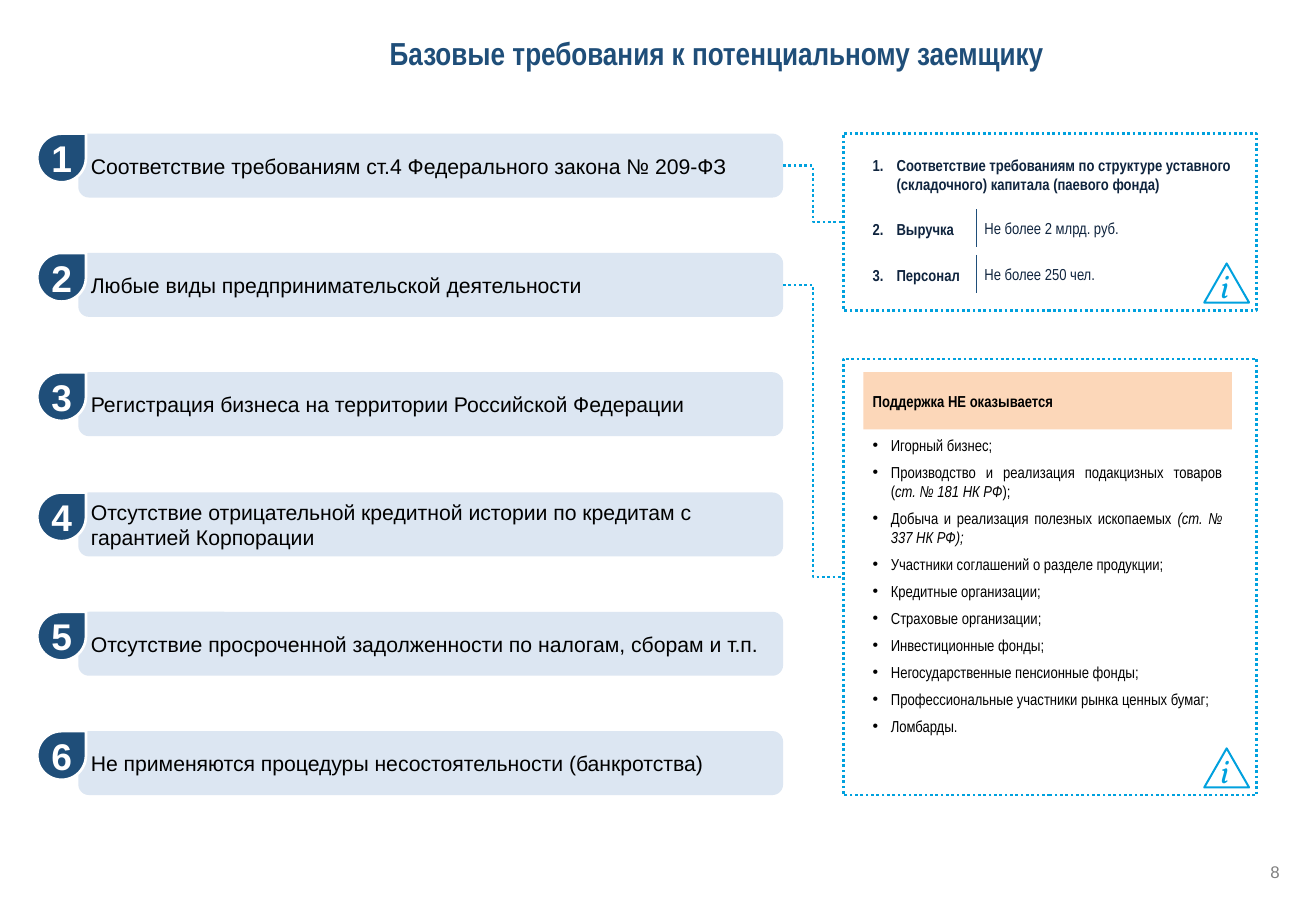
from lxml.etree import SubElement
from pptx import Presentation
from pptx.dml.color import RGBColor
from pptx.enum.dml import MSO_LINE
from pptx.enum.shapes import MSO_CONNECTOR as CONNECTOR, MSO_SHAPE as SHAPE
from pptx.enum.text import MSO_ANCHOR as ANCHOR, MSO_AUTO_SIZE as AUTO_SIZE, PP_ALIGN as ALIGN
from pptx.oxml.ns import qn
from pptx.util import Pt

PX = 9144
NAVY, CYAN, PALE, PEACH = "1F4E79", "00A1DE", "DCE6F2", "FCD7B9"
WHITE, BLACK, INK, GRAY = "FFFFFF", "000000", "0F243E", "808080"

TITLE = {"name": "Arial Narrow", "size": Pt(24), "bold": True, "color": NAVY}
REQUIREMENT = {"name": "Arial", "size": Pt(16), "color": BLACK}
BADGE = {"name": "Arial", "size": Pt(28), "bold": True, "color": WHITE}
NOTE = {"name": "Arial Narrow", "size": Pt(12), "color": INK}
NOTE_BOLD = {**NOTE, "bold": True}
HEADER = {**NOTE_BOLD, "color": BLACK}
BULLET = {**NOTE, "color": BLACK}
INFO = {"name": "Vollkorn", "size": Pt(24), "italic": True, "color": CYAN}
PAGE = {"name": "Arial", "size": Pt(12.7), "color": GRAY}

REQUIREMENTS = [
    "Соответствие требованиям ст.4 Федерального закона № 209-ФЗ",
    "Любые виды предпринимательской деятельности",
    "Регистрация бизнеса на территории Российской Федерации",
    "Отсутствие отрицательной кредитной истории по кредитам с гарантией Корпорации",
    "Отсутствие просроченной задолженности по налогам, сборам и т.п.",
    "Не применяются процедуры несостоятельности (банкротства)",
]
LIMITS = [("Выручка", "Не более 2 млрд. руб."), ("Персонал", "Не более 250 чел.")]
EXCLUSIONS = [
    ["Игорный бизнес;"],
    ["Производство и реализация подакцизных товаров (", "ст. № 181 НК РФ", ");"],
    ["Добыча и реализация полезных ископаемых ", "(ст. № 337 НК РФ);"],
    ["Участники соглашений о разделе продукции;"],
    ["Кредитные организации;"],
    ["Страховые организации;"],
    ["Инвестиционные фонды;"],
    ["Негосударственные пенсионные фонды;"],
    ["Профессиональные участники рынка ценных бумаг;"],
    ["Ломбарды."],
]


def rgb(value):
    return RGBColor.from_string(value)


def scaled(*lengths):
    return [length * PX for length in lengths]


def add_run(paragraph, text, style):
    run = paragraph.add_run()
    run.text = text
    for name, value in style.items():
        if name == "color":
            run.font.color.rgb = rgb(value)
        else:
            setattr(run.font, name, value)


def add_bullet(paragraph, indent, tag, **attributes):
    properties = paragraph._p.get_or_add_pPr()
    properties.set("marL", str(indent * PX))
    properties.set("indent", str(-indent * PX))
    SubElement(properties, qn("a:buFont"), typeface="+mj-lt" if tag == "a:buAutoNum" else "Arial")
    SubElement(properties, qn(tag), **attributes)


def write(shape, text, style, align=ALIGN.LEFT, anchor=ANCHOR.MIDDLE, inset=None, wrap=True):
    frame = shape.text_frame
    settings = {"word_wrap": wrap, "vertical_anchor": anchor, "auto_size": AUTO_SIZE.NONE}
    if inset is not None:
        settings.update({f"margin_{side}": inset for side in ("left", "top", "right", "bottom")})
    for name, value in settings.items():
        setattr(frame, name, value)
    paragraph = frame.paragraphs[0]
    paragraph.alignment = align
    if text:
        add_run(paragraph, text, style)
    return paragraph


def add_text(slide, box, text, style, **options):
    return write(slide.shapes.add_textbox(*scaled(*box)), text, style, **options)


def format_line(line, color, width, dash=None):
    line.color.rgb = rgb(color)
    line.width = Pt(width)
    if dash:
        line.dash_style = dash


def add_shape(slide, kind, box, fill=None, line=None):
    shape = slide.shapes.add_shape(kind, *scaled(*box))
    shape.shadow.inherit = False
    if fill:
        shape.fill.solid()
        shape.fill.fore_color.rgb = rgb(fill)
    else:
        shape.fill.background()
    if line:
        format_line(shape.line, *line)
    else:
        shape.line.fill.background()
    return shape


def add_line(slide, kind, ends, *line):
    connector = slide.shapes.add_connector(kind, *scaled(*ends))
    format_line(connector.line, *line)
    SubElement(connector._element.spPr, qn("a:effectLst"))
    return connector


def add_title(slide, box):
    title = slide.shapes.title
    for name, value in zip(("left", "top", "width", "height"), scaled(*box)):
        setattr(title, name, value)
    write(title, "Базовые требования к потенциальному заемщику", TITLE)


def add_requirements(slide, box):
    left, top, width, height = box
    card_height, badge_size, offset = 67, 51, 43
    pitch = (height - card_height) / (len(REQUIREMENTS) - 1)
    cards = []
    for index, text in enumerate(REQUIREMENTS):
        y = top + round(index * pitch)
        card = add_shape(slide, SHAPE.ROUNDED_RECTANGLE,
                         (left + offset, y, width - offset, card_height), PALE)
        write(card, text, REQUIREMENT)
        badge = add_shape(slide, SHAPE.TEAR, (left, y, badge_size, badge_size), NAVY, (WHITE, 2))
        write(badge, str(index + 1), BADGE, align=ALIGN.CENTER, inset=0)
        cards.append(card)
    return cards


def add_panel(slide, box):
    left, top, width, height = box
    panel = add_shape(slide, SHAPE.RECTANGLE, box, line=(CYAN, 2, MSO_LINE.ROUND_DOT))
    x, y = left + width - 55, top + height - 49
    add_shape(slide, SHAPE.ISOSCELES_TRIANGLE, (x, y, 47, 41), WHITE, (CYAN, 1.5))
    add_text(slide, (x + 7, y - 1, 29, 50), "i", INFO,
             align=ALIGN.CENTER, anchor=ANCHOR.TOP, wrap=False)
    return panel


def add_numbered(slide, box, number, text):
    paragraph = add_text(slide, box, "", NOTE_BOLD)
    add_bullet(paragraph, 25, "a:buAutoNum", type="arabicPeriod", startAt=str(number))
    add_run(paragraph, text, NOTE_BOLD)


def add_limits_panel(slide, box):
    left, top, width, height = box
    panel = add_panel(slide, box)
    add_numbered(slide, (left + 21, top + 13, width - 21, 60), 1,
                 "Соответствие требованиям по структуре уставного (складочного) капитала (паевого фонда)")
    for index, (label, value) in enumerate(LIMITS):
        y = top + 78 + index * 48
        add_numbered(slide, (left + 21, y, 206, 44), index + 2, label)
        add_text(slide, (left + 138, y - 1, 165, 44), value, NOTE)
        x = left + 140
        add_line(slide, CONNECTOR.STRAIGHT, (x, y + 1, x, y + 41), NAVY, 0.75)
    return panel


def add_exclusions_panel(slide, box):
    left, top, width, height = box
    panel = add_panel(slide, box)
    header = add_shape(slide, SHAPE.RECTANGLE, (left + 21, top + 14, 386, 60), PEACH)
    write(header, "Поддержка НЕ оказывается", HEADER)
    paragraph = add_text(slide, (left + 21, top + 75, 386, 328), "", BULLET, anchor=ANCHOR.TOP)
    frame = paragraph._parent
    for index, parts in enumerate(EXCLUSIONS):
        if index:
            paragraph = frame.add_paragraph()
            paragraph.space_before = Pt(6)
        paragraph.alignment = ALIGN.JUSTIFY
        add_bullet(paragraph, 19, "a:buChar", char="•")
        for position, text in enumerate(parts):
            add_run(paragraph, text, {**BULLET, "italic": position == 1})
    return panel


def join(slide, card, panel):
    connector = add_line(slide, CONNECTOR.ELBOW, (820, 174, 883, 233), CYAN, 2, MSO_LINE.ROUND_DOT)
    connector.begin_connect(card, 3)
    connector.end_connect(panel, 1)


def main():
    presentation = Presentation()
    presentation.slide_width, presentation.slide_height = scaled(1378, 945)
    slide = presentation.slides.add_slide(presentation.slide_layouts[5])
    add_title(slide, (398, 17, 943, 76))
    cards = add_requirements(slide, (39, 140, 781, 693))
    panels = [add_limits_panel(slide, (883, 140, 433, 185)),
              add_exclusions_panel(slide, (883, 376, 433, 457))]
    for card, panel in zip(cards, panels):
        join(slide, card, panel)
    add_text(slide, (1298, 903, 42, 20), "8", PAGE, align=ALIGN.RIGHT, inset=0)
    presentation.save("out.pptx")


if __name__ == "__main__":
    main()
